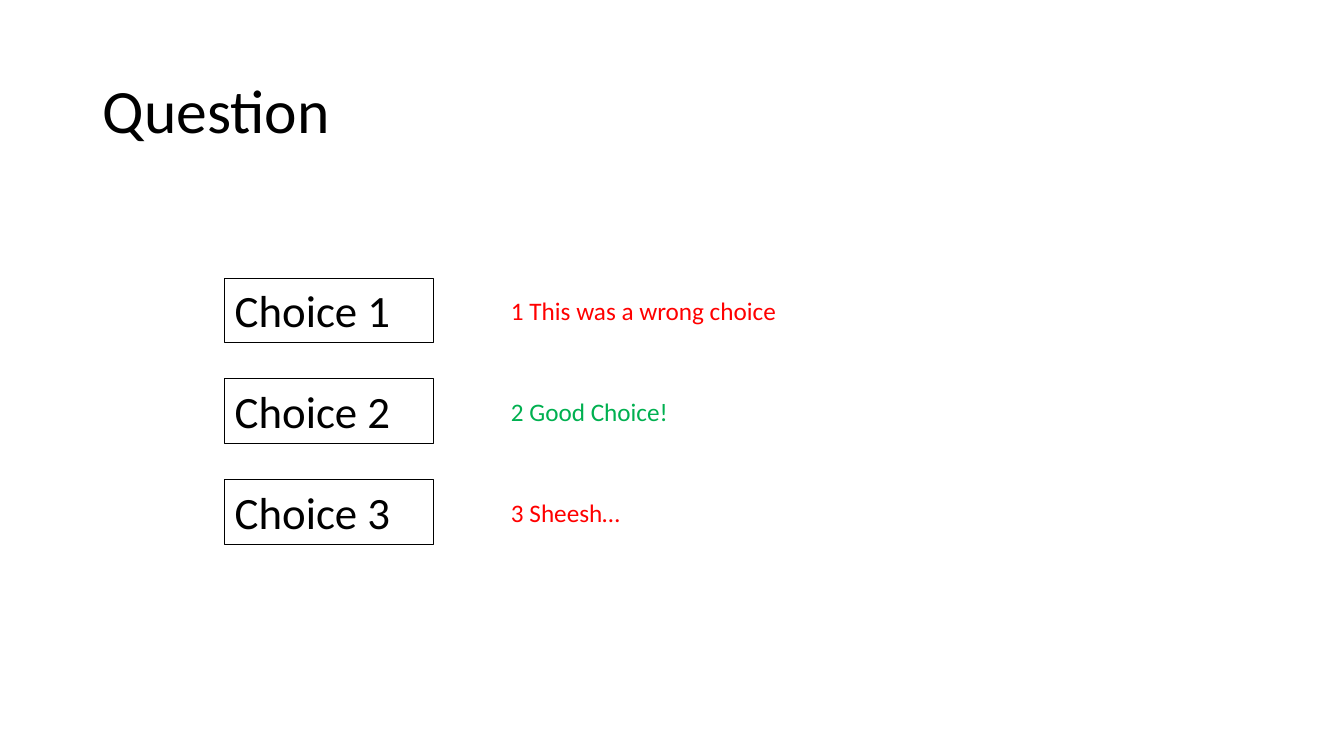
"""Build a quiz slide with three choices and the feedback for each."""
from dataclasses import dataclass

from pptx import Presentation
from pptx.dml.color import RGBColor
from pptx.enum.text import MSO_ANCHOR, MSO_AUTO_SIZE, PP_ALIGN
from pptx.shapes.base import BaseShape
from pptx.slide import Slide
from pptx.util import Emu, Pt

LEFT = PP_ALIGN.LEFT
TOP, MIDDLE = MSO_ANCHOR.TOP, MSO_ANCHOR.MIDDLE
NO_FIT, GROW = MSO_AUTO_SIZE.NONE, MSO_AUTO_SIZE.SHAPE_TO_FIT_TEXT
EMU_PER_PX = 9144
TITLE_ONLY = 5
ROW_PITCH = 100


@dataclass(frozen=True)
class Theme:
    font: str = "Calibri"
    ink: RGBColor = RGBColor(0x00, 0x00, 0x00)
    wrong: RGBColor = RGBColor(0xFF, 0x00, 0x00)
    right: RGBColor = RGBColor(0x00, 0xB0, 0x50)
    title_size: int = 44
    choice_size: int = 32
    feedback_size: int = 18
    outline_width: float = 0.75


@dataclass(frozen=True)
class Box:
    left: int
    top: int
    width: int
    height: int

    def row(self, index: int) -> "Box":
        return Box(self.left, self.top + index * ROW_PITCH, self.width, self.height)

    def emu(self) -> list[Emu]:
        return [px(n) for n in (self.left, self.top, self.width, self.height)]


@dataclass(frozen=True)
class Answer:
    choice: str
    feedback: str
    color: RGBColor


THEME = Theme()
TITLE_BOX = Box(92, 40, 1150, 145)
CHOICE_BOX = Box(223, 276, 207, 64)
FEEDBACK_BOX = Box(497, 288, 543, 40)
ANSWERS = [
    Answer("Choice 1", "1 This was a wrong choice", THEME.wrong),
    Answer("Choice 2", "2 Good Choice!", THEME.right),
    Answer("Choice 3", "3 Sheesh…", THEME.wrong),
]


def px(length: int) -> Emu:
    return Emu(length * EMU_PER_PX)


def write_text(shape: BaseShape, text: str, size: int, color: RGBColor) -> None:
    frame = shape.text_frame
    frame.text = text
    frame.word_wrap = True
    paragraph = frame.paragraphs[0]
    paragraph.alignment = LEFT
    paragraph.font.name = THEME.font
    paragraph.font.size = Pt(size)
    paragraph.font.color.rgb = color


def add_title(slide: Slide, text: str) -> None:
    title = slide.shapes.title
    title.left, title.top, title.width, title.height = TITLE_BOX.emu()
    write_text(title, text, THEME.title_size, THEME.ink)
    title.text_frame.auto_size = NO_FIT
    title.text_frame.vertical_anchor = MIDDLE
    title.text_frame.paragraphs[0].line_spacing = 0.9


def add_label(slide: Slide, box: Box, text: str, size: int, color: RGBColor) -> BaseShape:
    label = slide.shapes.add_textbox(*box.emu())
    write_text(label, text, size, color)
    label.text_frame.auto_size = GROW
    label.text_frame.vertical_anchor = TOP
    return label


def add_choice(slide: Slide, box: Box, text: str) -> None:
    choice = add_label(slide, box, text, THEME.choice_size, THEME.ink)
    choice.line.color.rgb = THEME.ink
    choice.line.width = Pt(THEME.outline_width)


def main() -> None:
    presentation = Presentation()
    presentation.slide_width, presentation.slide_height = px(1333), px(750)
    slide = presentation.slides.add_slide(presentation.slide_layouts[TITLE_ONLY])
    add_title(slide, "Question")
    for index, answer in enumerate(ANSWERS):
        add_choice(slide, CHOICE_BOX.row(index), answer.choice)
    for index, answer in enumerate(ANSWERS):
        add_label(slide, FEEDBACK_BOX.row(index), answer.feedback,
                  THEME.feedback_size, answer.color)
    presentation.save("out.pptx")


if __name__ == "__main__":
    main()
